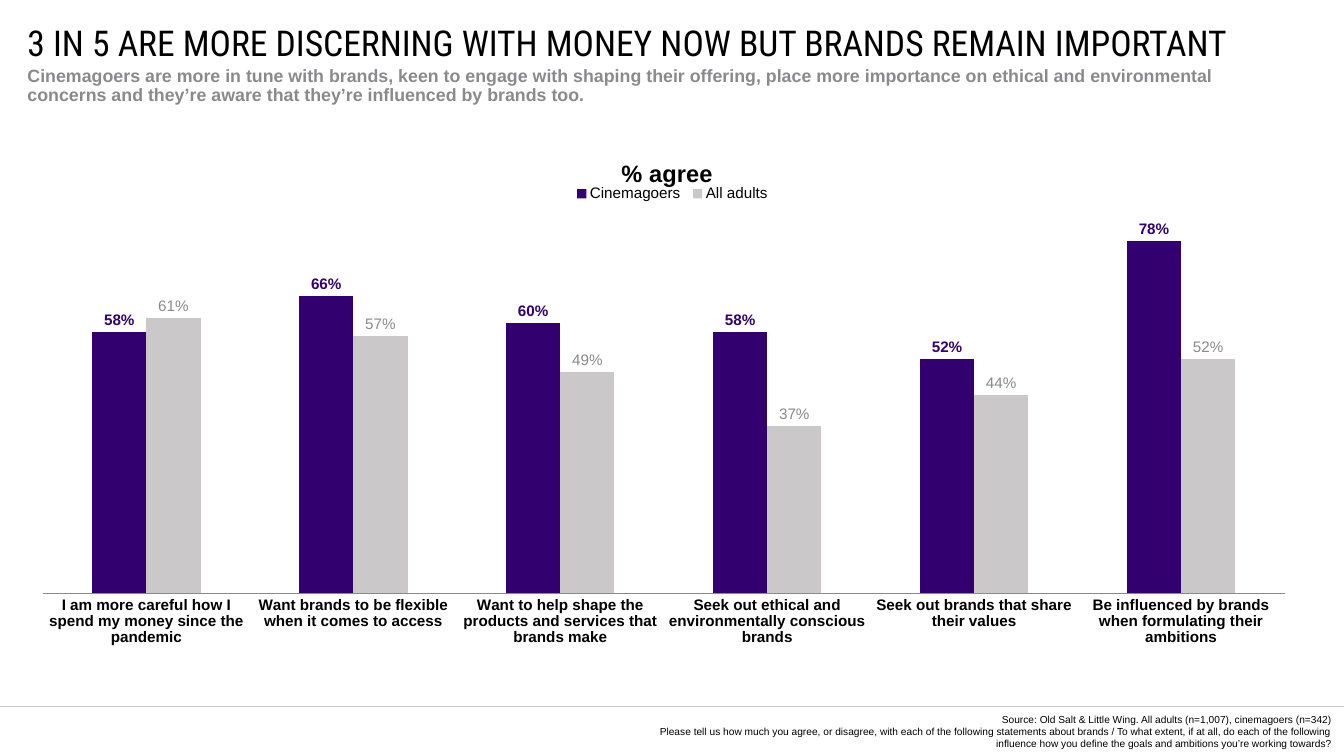
"""Build the slide on how cinemagoers and all adults relate to brands."""
from lxml import etree
from pptx import Presentation
from pptx import util as u
from pptx.chart.data import CategoryChartData
from pptx.dml.color import RGBColor
from pptx.enum import chart as ch, shapes, text
from pptx.oxml import parse_xml
from pptx.oxml.ns import nsdecls, qn

BLACK, GREY, SILVER, PURPLE = "000000", "8A8A8D", "CAC8C8", "33006F"
CHART_BOX = (0.19, 1.31, 14.14, 6.21)

TITLE = "3 IN 5 ARE MORE DISCERNING WITH MONEY NOW BUT BRANDS REMAIN IMPORTANT"
SUBTITLE = (
    "Cinemagoers are more in tune with brands, keen to engage with shaping their "
    "offering, place more importance on ethical and environmental concerns and "
    "they’re aware that they’re influenced by brands too."
)
SOURCE = [
    "Source: Old Salt & Little Wing. All adults (n=1,007), cinemagoers (n=342)",
    "Please tell us how much you agree, or disagree, with each of the following "
    "statements about brands / To what extent, if at all, do each of the following "
    "influence how you define the goals and ambitions you’re working towards?",
]
STATEMENTS = [
    ("I am more careful how I spend my money since the pandemic", 0.58, 0.61),
    ("Want brands to be flexible when it comes to access", 0.66, 0.57),
    ("Want to help shape the products and services that brands make", 0.60, 0.49),
    ("Seek out ethical and environmentally conscious brands", 0.58, 0.37),
    ("Seek out brands that share their values", 0.52, 0.44),
    ("Be influenced by brands when formulating their ambitions", 0.78, 0.52),
]
SERIES = [("Cinemagoers", PURPLE, PURPLE, True), ("All adults", SILVER, GREY, False)]


def color(value):
    """Turn a hex string into a colour."""
    return RGBColor.from_string(value)


def style_font(font, size, hex_color, bold=False, name="Arial"):
    """Set the face, size, weight and colour of a font."""
    font.name, font.size, font.bold = name, u.Pt(size), bold
    font.color.rgb = color(hex_color)


def fill_text(shape, lines, size, hex_color, bold=False, name="Arial", wrap=True,
              anchor=text.MSO_ANCHOR.MIDDLE, align=text.PP_ALIGN.LEFT, spacing=None):
    """Write one paragraph per line into a shape without margins."""
    frame = shape.text_frame
    frame.word_wrap, frame.vertical_anchor = wrap, anchor
    frame.margin_left = frame.margin_right = frame.margin_top = frame.margin_bottom = 0
    for index, line in enumerate(lines):
        paragraph = frame.add_paragraph() if index else frame.paragraphs[0]
        paragraph.alignment = align
        if spacing:
            paragraph.line_spacing = u.Pt(spacing)
        run = paragraph.add_run()
        run.text = line
        style_font(run.font, size, hex_color, bold, name)


def add_title(slide):
    """Place and fill the title placeholder."""
    title = slide.shapes.title
    title.left, title.top, title.width, title.height = map(u.Inches, (0.3, 0.3, 13.58, 0.32))
    fill_text(title, [TITLE], 28, BLACK, name="Roboto Condensed", wrap=False)


def add_text(slide, box, lines, size, hex_color, **options):
    """Add a text box."""
    shape = slide.shapes.add_textbox(*map(u.Inches, box))
    fill_text(shape, lines, size, hex_color, **options)


def add_rule(slide, top, width):
    """Draw the thin line above the footer."""
    rule = slide.shapes.add_connector(
        shapes.MSO_CONNECTOR.STRAIGHT, 0, u.Inches(top), u.Inches(width), u.Inches(top))
    rule.line.color.rgb = color(SILVER)
    rule.line.width = u.Pt(0.5)
    etree.SubElement(rule.element.spPr, qn("a:effectLst"))


def place_part(part, position, left, top, width=None, height=None, target=""):
    """Lay out a chart part, in inches from the chart's corner."""
    for old in part.findall(qn("c:layout")):
        part.remove(old)
    parts = [("xMode", "edge"), ("yMode", "edge"),
             ("x", left / CHART_BOX[2]), ("y", top / CHART_BOX[3])]
    if width:
        parts += [("w", width / CHART_BOX[2]), ("h", height / CHART_BOX[3])]
    if target:
        parts.insert(0, ("layoutTarget", target))
    inner = "".join(f'<c:{tag} val="{value}"/>' for tag, value in parts)
    part.insert(position, parse_xml(
        f'<c:layout {nsdecls("c")}><c:manualLayout>{inner}</c:manualLayout></c:layout>'))


def style_axes(chart):
    """Show the statements on the category axis and hide the value axis."""
    statements, values = chart.category_axis, chart.value_axis
    statements.major_tick_mark = statements.minor_tick_mark = ch.XL_TICK_MARK.NONE
    statements.format.line.color.rgb = color(GREY)
    statements.format.line.width = u.Pt(0.75)
    style_font(statements.tick_labels.font, 12, BLACK, True)
    values.minimum_scale, values.maximum_scale = 0, 0.9
    values.has_major_gridlines = False
    values.visible = False


def style_series(series, fill, label_color, bold):
    """Colour the columns and label their values."""
    series.format.fill.solid()
    series.format.fill.fore_color.rgb = color(fill)
    series.invert_if_negative = False
    labels = series.data_labels
    labels.show_value = True
    labels.number_format, labels.number_format_is_linked = "0%", False
    labels.position = ch.XL_LABEL_POSITION.OUTSIDE_END
    style_font(labels.font, 12, label_color, bold)


def add_agreement_chart(slide):
    """Add the clustered columns with their title and legend."""
    statements, *shares = zip(*STATEMENTS)
    data = CategoryChartData(number_format="0%")
    data.categories = statements
    for (name, *_), values in zip(SERIES, shares):
        data.add_series(name, values)
    chart = slide.shapes.add_chart(
        ch.XL_CHART_TYPE.COLUMN_CLUSTERED, *map(u.Inches, CHART_BOX), data).chart
    style_font(chart.font, 10, PURPLE)
    style_axes(chart)

    plot = chart.plots[0]
    plot.vary_by_categories = False
    plot.gap_width, plot.overlap = 182, 0
    for series, (_, *style) in zip(plot.series, SERIES):
        style_series(series, *style)

    chart.has_title = True
    run = chart.chart_title.text_frame.paragraphs[0].add_run()
    run.text = "% agree"
    style_font(run.font, 18.6, BLACK, True)
    chart.has_legend = True
    chart.legend.position = ch.XL_LEGEND_POSITION.BOTTOM
    chart.legend.include_in_layout = False
    style_font(chart.legend.font, 12, BLACK)

    area, title, legend = (chart.element.xpath(f"c:chart/c:{tag}")[0]
                           for tag in ("plotArea", "title", "legend"))
    place_part(area, 0, 0.28, 0.74, 13.58, 4.44, target="inner")
    place_part(title, 1, 6.56, 0.37)
    place_part(legend, 1, 6.04, 0.69, 2.25, 0.24)


def main():
    """Build and save the slide."""
    presentation = Presentation()
    presentation.slide_width, presentation.slide_height = u.Inches(14.7), u.Inches(8.27)
    slide = presentation.slides.add_slide(presentation.slide_layouts.get_by_name("Title Only"))
    add_rule(slide, 7.73, 14.7)
    add_title(slide)
    add_text(slide, (6.76, 7.8, 7.81, 0.4), SOURCE, 8, BLACK, align=text.PP_ALIGN.RIGHT)
    add_text(slide, (0.3, 0.73, 13.59, 0.48), [SUBTITLE], 14, GREY, bold=True,
             anchor=text.MSO_ANCHOR.TOP, spacing=15)
    add_agreement_chart(slide)
    presentation.save("out.pptx")


if __name__ == "__main__":
    main()
